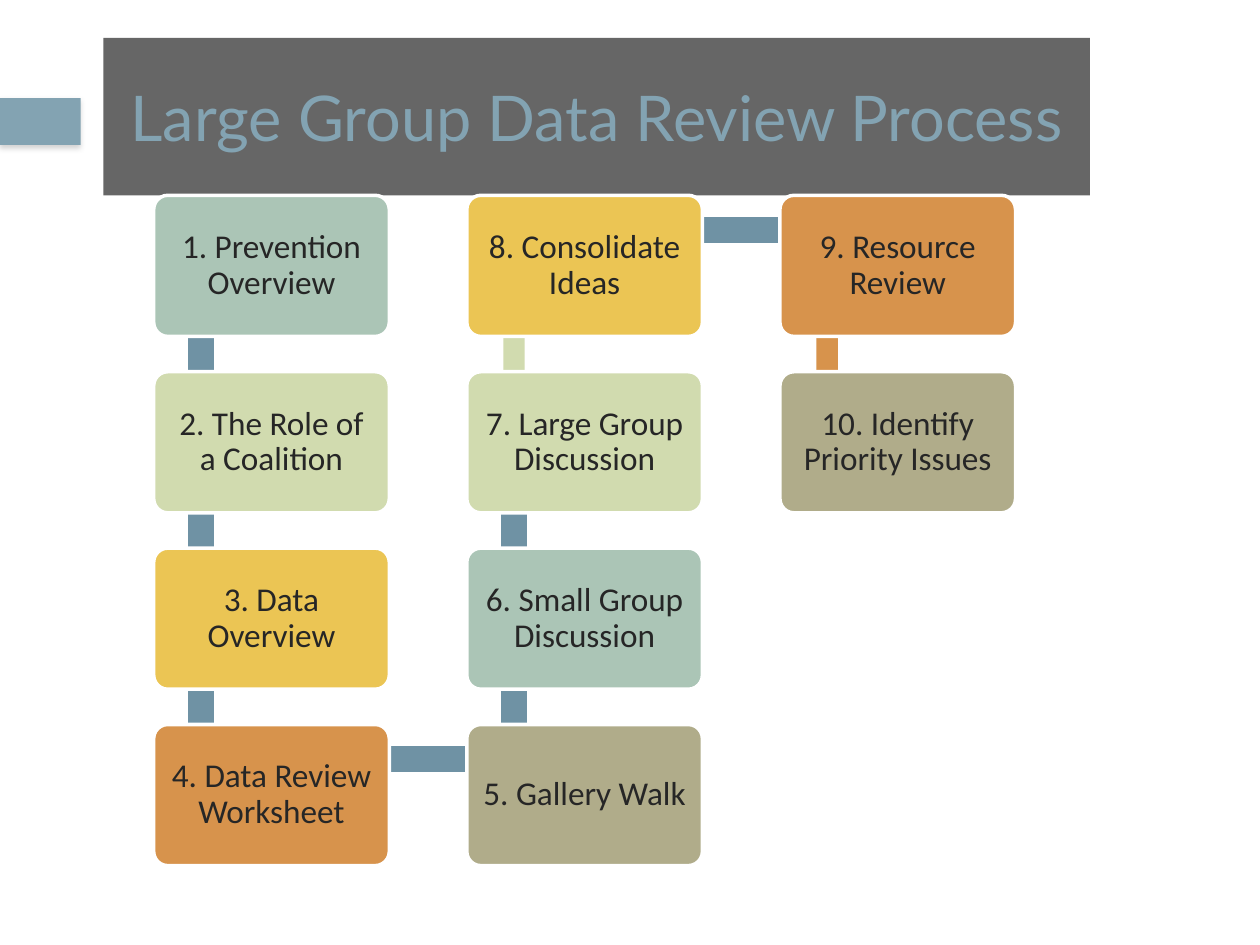
from lxml import etree
from pptx import Presentation
from pptx.dml.color import RGBColor
from pptx.enum.shapes import MSO_SHAPE
from pptx.enum.text import MSO_ANCHOR, PP_ALIGN
from pptx.oxml.ns import qn
from pptx.util import Inches, Pt

RECT, ROUND = MSO_SHAPE.RECTANGLE, MSO_SHAPE.ROUNDED_RECTANGLE
MIDDLE, CENTER = MSO_ANCHOR.MIDDLE, PP_ALIGN.CENTER

WHITE = RGBColor(0xFF, 0xFF, 0xFF)
GRAY = RGBColor(0x66, 0x66, 0x66)
BLUE = RGBColor(0x83, 0xA3, 0xB2)
STEEL = RGBColor(0x6F, 0x92, 0xA4)
INK = RGBColor(0x26, 0x26, 0x26)
TEAL = RGBColor(0xAB, 0xC5, 0xB6)
GREEN = RGBColor(0xD1, 0xDB, 0xAF)
YELLOW = RGBColor(0xEB, 0xC5, 0x54)
ORANGE = RGBColor(0xD7, 0x93, 0x4C)
KHAKI = RGBColor(0xB0, 0xAC, 0x8A)

# Grid of steps, in inches
LEFT, TOP = 1.22, 1.55
COL, ROW = 2.485, 1.4
BOX_W, BOX_H = 1.87, 1.12
BAR = 0.17
BAR_X, BAR_Y = 0.375, 0.275  # where bars start inside a box

prs = Presentation()
prs.slide_width, prs.slide_height = Inches(10), Inches(7.5)
s = prs.slides.add_slide(prs.slide_layouts[6])


def add_box(kind, x, y, w, h, fill, line=None, width=0):
    sp = s.shapes.add_shape(kind, Inches(x), Inches(y), Inches(w), Inches(h))
    sp.shadow.inherit = False
    sp.fill.solid()
    sp.fill.fore_color.rgb = fill
    if line is None:
        sp.line.fill.background()
    else:
        sp.line.color.rgb = line
        sp.line.width = Pt(width)
    return sp


def add_text(sp, text, font, size, color):
    tf = sp.text_frame
    tf.word_wrap = True
    tf.vertical_anchor = MIDDLE
    p = tf.paragraphs[0]
    p.text = text
    p.alignment = CENTER
    p.font.name, p.font.size = font, Pt(size)
    p.font.color.rgb = color
    return tf


# Side tab with a soft shadow below
tab = add_box(RECT, 0, 0.78, 0.64, 0.37, BLUE)
effects = tab._element.spPr.find(qn("a:effectLst"))
shadow = etree.SubElement(effects, qn("a:outerShdw"), blurRad=str(Pt(3.1)),
                          dist=str(Pt(1.8)), dir="5400000", rotWithShape="0")
tint = etree.SubElement(shadow, qn("a:srgbClr"), val="808080")
etree.SubElement(tint, qn("a:alpha"), val="35000")

# Title band
title = add_box(RECT, 0.82, 0.3, 7.83, 1.25, GRAY)
add_text(title, "Large Group Data Review Process", "Lato", 36, BLUE)

# Steps snake down, up and down: text, column, row, fill, bar to the next step
steps = [
    ("1. Prevention Overview", 0, 0, TEAL, STEEL),
    ("2. The Role of a Coalition", 0, 1, GREEN, STEEL),
    ("3. Data Overview", 0, 2, YELLOW, STEEL),
    ("4. Data Review Worksheet", 0, 3, ORANGE, STEEL),
    ("5. Gallery Walk", 1, 3, KHAKI, STEEL),
    ("6. Small Group Discussion", 1, 2, TEAL, STEEL),
    ("7. Large Group Discussion", 1, 1, GREEN, GREEN),
    ("8. Consolidate Ideas", 1, 0, YELLOW, STEEL),
    ("9. Resource Review", 2, 0, ORANGE, ORANGE),
    ("10. Identify Priority Issues", 2, 1, KHAKI, None),
]
for i, (text, col, row, fill, bar) in enumerate(steps):
    # Bar to the next step, partly hidden behind both boxes
    if bar is not None:
        next_col, next_row = steps[i + 1][1:3]
        x = LEFT + min(col, next_col) * COL + BAR_X
        y = TOP + min(row, next_row) * ROW + BAR_Y
        outline = STEEL if bar == STEEL else None
        if col == next_col:
            add_box(RECT, x - BAR / 2, y, BAR, ROW, bar, outline, 2.25)
        else:
            add_box(RECT, x, y - BAR / 2, COL, BAR, bar, outline, 2.25)

    sp = add_box(ROUND, LEFT + col * COL, TOP + row * ROW, BOX_W, BOX_H,
                 fill, WHITE, 2)
    sp.adjustments[0] = 0.1
    tf = add_text(sp, text, "Calibri", 19, INK)
    tf.margin_left = tf.margin_right = Inches(0.08)
    tf.margin_top = tf.margin_bottom = Inches(0.08)
    tf.paragraphs[0].line_spacing = 0.9

prs.save("out.pptx")
